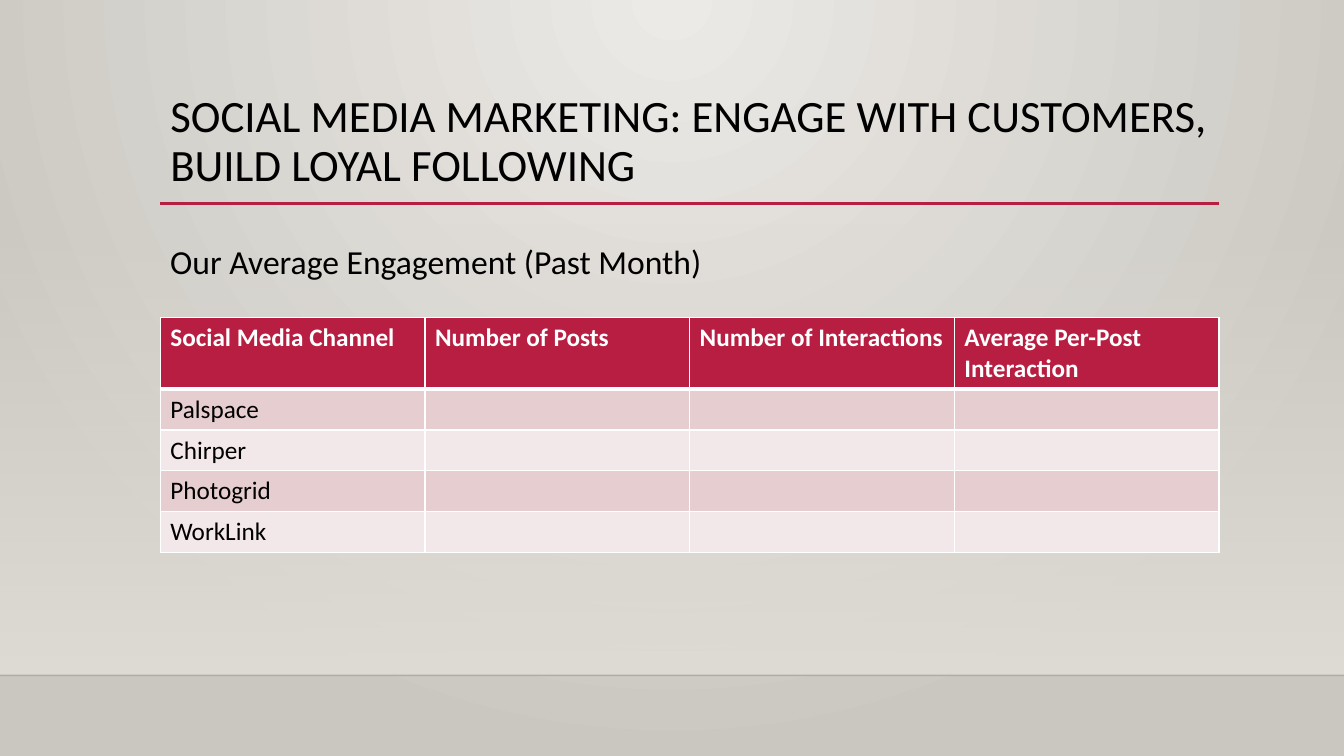
from dataclasses import dataclass

from lxml import etree
from pptx import Presentation
from pptx.dml.color import RGBColor
from pptx.enum.shapes import MSO_CONNECTOR, MSO_SHAPE
from pptx.enum.text import MSO_ANCHOR, PP_ALIGN
from pptx.oxml.ns import qn
from pptx.util import Cm, Pt

STRAIGHT = MSO_CONNECTOR.STRAIGHT
RECTANGLE = MSO_SHAPE.RECTANGLE
TOP = MSO_ANCHOR.TOP
LEFT = PP_ALIGN.LEFT

SLIDE_WIDTH, SLIDE_HEIGHT = 33.87, 19.05
MARGIN, CONTENT_WIDTH = 4.04, 26.68
WALL_TOP, FLOOR_TOP = 5.61, 17.02
TITLE_ONLY = 5

HEADINGS = ["Social Media Channel", "Number of Posts",
            "Number of Interactions", "Average Per-Post Interaction"]
CHANNELS = ["Palspace", "Chirper", "Photogrid", "WorkLink"]


@dataclass(frozen=True)
class Theme:
    font: str = "Calibri"
    text: str = "000000"
    accent: str = "B71E42"
    white: str = "FFFFFF"
    bands: tuple = ("E6CDCF", "F3E8E9")
    backdrop: tuple = ("ECEAE7", "CAC7C1")
    wall: str = "DFDBD5"
    floor_edge: str = "000001"
    title_size: int = 32
    subtitle_size: int = 24
    table_size: int = 18


def set_opacity(owner, percent):
    """Apply an opacity to the first RGB colour inside an element."""
    colour = next(owner.iter(qn("a:srgbClr")))
    etree.SubElement(colour, qn("a:alpha"), val=str(percent * 1000))


class SlideBuilder:
    def __init__(self, slide, theme):
        self.slide = slide
        self.theme = theme

    def set_text(self, frame, text, size, colour, bold=False):
        frame.text = text
        for paragraph in frame.paragraphs:
            paragraph.alignment = LEFT
            for run in paragraph.runs:
                run.font.name = self.theme.font
                run.font.size = Pt(size)
                run.font.bold = bold
                run.font.color.rgb = RGBColor.from_string(colour)

    def colour_stops(self, fill, colours):
        fill.gradient()
        for stop, colour in zip(fill.gradient_stops, colours):
            stop.color.rgb = RGBColor.from_string(colour)

    def radial_background(self):
        self.colour_stops(self.slide.background.fill, self.theme.backdrop)
        gradient = next(self.slide.element.iter(qn("a:gradFill")))
        linear = gradient.find(qn("a:lin"))
        radial = etree.Element(qn("a:path"), path="circle")
        etree.SubElement(radial, qn("a:fillToRect"),
                         l="43000", t="0", r="43000", b="100000")
        gradient.replace(linear, radial)

    def fading_wall(self, top, height):
        wall = self.slide.shapes.add_shape(
            RECTANGLE, 0, Cm(top), Cm(SLIDE_WIDTH), Cm(height))
        wall.shadow.inherit = False
        wall.line.fill.background()
        self.colour_stops(wall.fill, [self.theme.wall] * 2)
        wall.fill.gradient_angle = 270
        set_opacity(wall.element.spPr, 0)

    def rule(self, left, right, y, colour, width, opacity=100):
        rule = self.slide.shapes.add_connector(
            STRAIGHT, Cm(left), Cm(y), Cm(right), Cm(y))
        rule.line.color.rgb = RGBColor.from_string(colour)
        rule.line.width = Pt(width)
        properties = rule.element.spPr
        if opacity < 100:
            set_opacity(properties, opacity)
        etree.SubElement(properties, qn("a:effectLst"))

    def title(self, text, top, height):
        title = self.slide.shapes.title
        title.left, title.top = Cm(MARGIN), Cm(top)
        title.width, title.height = Cm(CONTENT_WIDTH), Cm(height)
        frame = title.text_frame
        frame.word_wrap = True
        frame.vertical_anchor = TOP
        self.set_text(frame, text, self.theme.title_size, self.theme.text)
        frame.paragraphs[0].line_spacing = 0.9

    def subtitle(self, text, top, width, height):
        box = self.slide.shapes.add_textbox(
            Cm(MARGIN), Cm(top), Cm(width), Cm(height))
        box.text_frame.word_wrap = True
        self.set_text(box.text_frame, text, self.theme.subtitle_size, self.theme.text)

    def border(self, cell, widths):
        """Draw borders in the order left, right, top, bottom."""
        properties = cell._tc.get_or_add_tcPr()
        for place, (side, width) in enumerate(zip("LRTB", widths)):
            line = etree.Element(qn(f"a:ln{side}"), w=str(Pt(width)))
            fill = etree.SubElement(line, qn("a:solidFill"))
            etree.SubElement(fill, qn("a:srgbClr"), val=self.theme.white)
            properties.insert(place, line)

    def table(self, rows, top, header_height, row_height):
        theme = self.theme
        columns = len(rows[0])
        height = header_height + row_height * (len(rows) - 1)
        table = self.slide.shapes.add_table(
            len(rows), columns, Cm(MARGIN), Cm(top),
            Cm(CONTENT_WIDTH), Cm(height)).table
        for column in table.columns:
            column.width = Cm(CONTENT_WIDTH / columns)
        for index, values in enumerate(rows):
            header = index == 0
            table.rows[index].height = Cm(header_height if header else row_height)
            fill = theme.accent if header else theme.bands[(index - 1) % 2]
            colour = theme.white if header else theme.text
            widths = (1, 1, 3 if index == 1 else 1, 3 if header else 1)
            for cell, value in zip(table.rows[index].cells, values):
                cell.fill.solid()
                cell.fill.fore_color.rgb = RGBColor.from_string(fill)
                self.set_text(cell.text_frame, value, theme.table_size, colour, header)
                self.border(cell, widths)


def main():
    presentation = Presentation()
    presentation.slide_width = Cm(SLIDE_WIDTH)
    presentation.slide_height = Cm(SLIDE_HEIGHT)
    theme = Theme()
    layout = presentation.slide_layouts[TITLE_ONLY]
    builder = SlideBuilder(presentation.slides.add_slide(layout), theme)

    builder.radial_background()
    builder.fading_wall(WALL_TOP, FLOOR_TOP - WALL_TOP)
    builder.rule(0, SLIDE_WIDTH, FLOOR_TOP, theme.floor_edge, 1, opacity=20)
    builder.rule(MARGIN, MARGIN + CONTENT_WIDTH, 5.13, theme.accent, 2.5)
    builder.title("SOCIAL MEDIA MARKETING: ENGAGE WITH CUSTOMERS, "
                  "BUILD LOYAL FOLLOWING", 2.24, 2.92)
    blanks = [""] * (len(HEADINGS) - 1)
    builder.table([HEADINGS] + [[channel] + blanks for channel in CHANNELS],
                  8.0, 1.78, 1.03)
    builder.subtitle("Our Average Engagement (Past Month)", 5.94, 16.54, 1.27)

    presentation.save("out.pptx")


if __name__ == "__main__":
    main()
